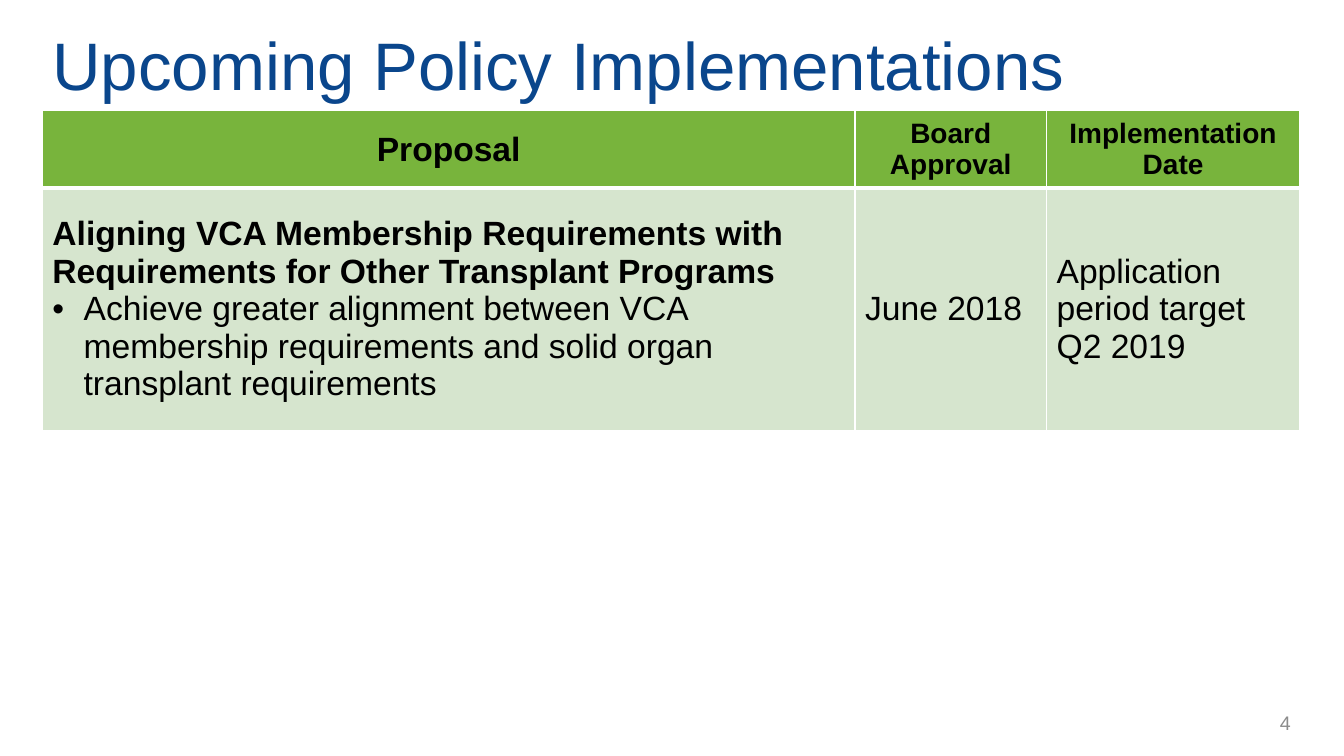
from lxml import etree
from pptx import Presentation
from pptx.dml.color import RGBColor
from pptx.enum import text
from pptx.oxml import ns
from pptx.util import Inches, Pt

THEME = {
    "font": "Arial",
    "title": {"size": 48, "color": "0A468C"},
    "page": {"size": 14, "color": "8C8C8C"},
    "body": {"size": 24, "color": "000000"},
    "small_header": {"size": 20, "color": "000000"},
    "header_fill": "78B43C",
    "row_fill": "D6E5CE",
    "border": "FFFFFF",
}
LEFT, CENTER, RIGHT = text.PP_ALIGN.LEFT, text.PP_ALIGN.CENTER, text.PP_ALIGN.RIGHT


def write(paragraph, words, style, align=LEFT, bold=False):
    paragraph.alignment = align
    run = paragraph.add_run()
    run.text = words
    font_format = {"name": THEME["font"], "size": Pt(style["size"]), "bold": bold}
    for key, value in font_format.items():
        setattr(run.font, key, value)
    run.font.color.rgb = RGBColor.from_string(style["color"])


def add_border(cell, side, width):
    """Draw one side (L, R, T or B) of a table cell; call before filling it."""
    line = etree.SubElement(cell._tc.get_or_add_tcPr(), ns.qn(f"a:ln{side}"), w=str(Pt(width)))
    fill = etree.SubElement(line, ns.qn("a:solidFill"))
    etree.SubElement(fill, ns.qn("a:srgbClr"), val=THEME["border"])


deck = Presentation()
deck.slide_width, deck.slide_height = Inches(13.33), Inches(7.5)
slide = deck.slides.add_slide(deck.slide_layouts[6])

# Title and page number
labels = [
    ("Upcoming Policy Implementations", "title", LEFT, (0.42, 0.17, 12.75, 0.93)),
    ("4", "page", RIGHT, (10.64, 6.97, 2.26, 0.4)),
]
for words, style, align, box in labels:
    frame = slide.shapes.add_textbox(*map(Inches, box)).text_frame
    frame.word_wrap = True
    frame.vertical_anchor = text.MSO_ANCHOR.MIDDLE
    write(frame.paragraphs[0], words, THEME[style], align)

# Policy table: each cell holds (words, style, bold, bulleted) paragraphs
column_widths = [8.06, 1.9, 2.51]
row_heights = [0.71, 2.4]
policy_rows = [
    [
        [("Proposal", "body", True, False)],
        [("Board Approval", "small_header", True, False)],
        [("Implementation Date", "small_header", True, False)],
    ],
    [
        [
            ("Aligning VCA Membership Requirements with Requirements for Other "
             "Transplant Programs", "body", True, False),
            ("Achieve greater alignment between VCA membership requirements and "
             "solid organ transplant requirements", "body", False, True),
        ],
        [("June 2018", "body", False, False)],
        [("Application period target Q2 2019", "body", False, False)],
    ],
]
policies = slide.shapes.add_table(
    len(row_heights), len(column_widths), Inches(0.42), Inches(1.1),
    Inches(sum(column_widths)), Inches(sum(row_heights))).table
policies.horz_banding = False
for column, width in zip(policies.columns, column_widths):
    column.width = Inches(width)
for row, height in zip(policies.rows, row_heights):
    row.height = Inches(height)

for row_index, policy_row in enumerate(policy_rows):
    is_header = row_index == 0
    for column_index, paragraphs in enumerate(policy_row):
        cell = policies.cell(row_index, column_index)
        cell.vertical_anchor = text.MSO_ANCHOR.MIDDLE
        border_widths = {"L": 1, "R": 1, "T": 1 if is_header else 3, "B": 3 if is_header else 1}
        for side, width in border_widths.items():
            add_border(cell, side, width)
        cell.fill.solid()
        cell.fill.fore_color.rgb = RGBColor.from_string(
            THEME["header_fill" if is_header else "row_fill"])
        for index, (words, style, bold, bulleted) in enumerate(paragraphs):
            frame = cell.text_frame
            paragraph = frame.add_paragraph() if index else frame.paragraphs[0]
            if bulleted:
                properties = paragraph._p.get_or_add_pPr()
                properties.set("marL", str(Inches(0.31)))
                properties.set("indent", str(Inches(-0.31)))
                etree.SubElement(properties, ns.qn("a:buFont"), typeface=THEME["font"])
                etree.SubElement(properties, ns.qn("a:buChar"), char="•")
            write(paragraph, words, THEME[style], CENTER if is_header else LEFT, bold)

deck.save("out.pptx")
